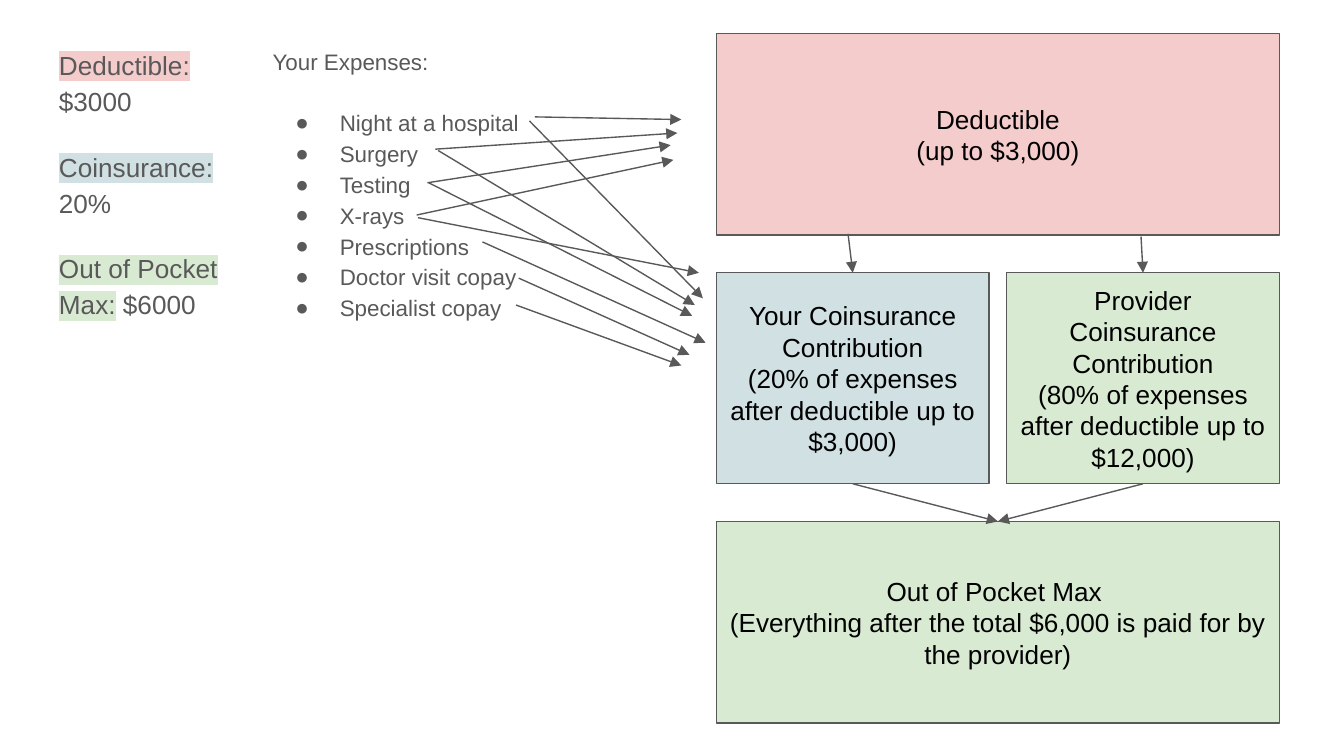
from typing import NamedTuple, Optional

from lxml import etree
from pptx import Presentation
from pptx.dml.color import RGBColor
from pptx.enum import shapes, text
from pptx.oxml.ns import qn
from pptx.util import Inches, Pt

GREY, BLACK = "595959", "000000"
PINK, BLUE, GREEN = "F4CCCC", "D0E0E3", "D9EAD3"


class Box(NamedTuple):
    left: float
    top: float
    width: float
    height: float
    fill: str
    title: str
    detail: str


class Term(NamedTuple):
    label: str
    value: str
    tint: str


class Arrow(NamedTuple):
    start: tuple[float, float]
    end: tuple[float, float]


LEFT, WIDE, HALF = 5.33, 4.19, 2.03
RIGHT = LEFT + WIDE - HALF

BOXES = [
    Box(LEFT, 0.25, WIDE, 1.5, PINK, "Deductible", "(up to $3,000)"),
    Box(LEFT, 2.03, HALF, 1.57, BLUE, "Your Coinsurance Contribution",
        "(20% of expenses after deductible up to $3,000)"),
    Box(RIGHT, 2.03, HALF, 1.57, GREEN, "Provider Coinsurance Contribution",
        "(80% of expenses after deductible up to $12,000)"),
    Box(LEFT, 3.88, WIDE, 1.5, GREEN, "Out of Pocket Max ",
        "(Everything after the total $6,000 is paid for by the provider)"),
]

TERMS = [
    Term("Deductible: ", "$3000", PINK),
    Term("Coinsurance:", " 20%", BLUE),
    Term("Out of Pocket Max:", " $6000", GREEN),
]

COSTS = ["Night at a hospital", "Surgery", "Testing", "X-rays",
         "Prescriptions", "Doctor visit copay", "Specialist copay"]

ARROWS = [
    Arrow((3.98, 0.87), (5.07, 0.89)),
    Arrow((3.94, 0.9), (5.23, 2.22)),
    Arrow((3.24, 1.11), (5.04, 0.99)),
    Arrow((3.26, 1.12), (5.17, 2.27)),
    Arrow((3.18, 1.36), (4.99, 1.08)),
    Arrow((3.19, 1.36), (5.15, 2.35)),
    Arrow((3.1, 1.6), (5.01, 1.19)),
    Arrow((3.11, 1.62), (5.2, 2.03)),
    Arrow((3.59, 1.8), (5.25, 2.55)),
    Arrow((3.86, 2.07), (5.13, 2.64)),
    Arrow((3.84, 2.27), (5.07, 2.72)),
]


def color(code: str) -> RGBColor:
    return RGBColor.from_string(code)


def style(run, size: float, code: str) -> None:
    run.font.size = Pt(size)
    run.font.name = "Arial"
    run.font.color.rgb = color(code)


def mark(run, code: str) -> None:
    """Highlight a run; the schema wants this right after its fill."""
    tint = etree.Element(qn("a:highlight"))
    etree.SubElement(tint, qn("a:srgbClr"), val=code)
    run.font._element.find(qn("a:solidFill")).addnext(tint)


def bullet(para) -> None:
    props = para._p.get_or_add_pPr()
    props.set("marL", str(Inches(0.5)))
    props.set("indent", str(Inches(-0.33)))
    tone = etree.SubElement(props, qn("a:buClr"))
    etree.SubElement(tone, qn("a:srgbClr"), val=GREY)
    etree.SubElement(props, qn("a:buFont"), typeface="Arial")
    etree.SubElement(props, qn("a:buChar"), char="●")


def pad(frame) -> None:
    frame.word_wrap = True
    frame.margin_left = frame.margin_right = Inches(0.1)
    frame.margin_top = frame.margin_bottom = Inches(0.1)


def add_text(slide, left: float, top: float, width: float, height: float):
    frame = slide.shapes.add_textbox(
        Inches(left), Inches(top), Inches(width), Inches(height)).text_frame
    pad(frame)
    return frame


def add_costs(slide) -> None:
    frame = add_text(slide, 1.93, 0.23, 2.09, 5.15)
    frame.text = "\n".join(["Your Expenses:", *COSTS])
    for i, para in enumerate(frame.paragraphs):
        para.line_spacing = 1.15
        style(para.runs[0], 12, GREY)
        if i == 1:
            para.space_before = Pt(16)
        if i:
            bullet(para)


def add_terms(slide) -> None:
    frame = add_text(slide, 0.34, 0.23, 1.5, 2.41)
    for i, term in enumerate(TERMS):
        para = frame.add_paragraph() if i else frame.paragraphs[0]
        para.line_spacing = 1.15
        if i:
            para.space_before = Pt(16)
        for part in (term.label, term.value):
            run = para.add_run()
            run.text = part
            style(run, 14, GREY)
        mark(para.runs[0], term.tint)
    frame.paragraphs[-1].space_after = Pt(16)


def add_box(slide, box: Box):
    shape = slide.shapes.add_shape(
        shapes.MSO_SHAPE.RECTANGLE, Inches(box.left), Inches(box.top),
        Inches(box.width), Inches(box.height))
    shape.shadow.inherit = False
    shape.fill.solid()
    shape.fill.fore_color.rgb = color(box.fill)
    shape.line.color.rgb = color(GREY)
    shape.line.width = Pt(0.75)
    frame = shape.text_frame
    pad(frame)
    frame.vertical_anchor = text.MSO_ANCHOR.MIDDLE
    frame.text = f"{box.title}\n{box.detail}"
    for para in frame.paragraphs:
        para.alignment = text.PP_ALIGN.CENTER
        style(para.runs[0], 14, BLACK)
    return shape


def add_arrow(slide, arrow: Arrow, source: Optional[object] = None,
              target: Optional[object] = None) -> None:
    """Draw an arrow, joined to a source's bottom and a target's top if given."""
    line = slide.shapes.add_connector(
        shapes.MSO_CONNECTOR.STRAIGHT,
        *map(Inches, arrow.start), *map(Inches, arrow.end))
    line.line.color.rgb = color(GREY)
    line.line.width = Pt(0.75)
    etree.SubElement(line.line._get_or_add_ln(), qn("a:tailEnd"),
                     type="triangle")
    etree.SubElement(line._element.spPr, qn("a:effectLst"))
    if source is not None:
        line.begin_connect(source, 2)
    if target is not None:
        line.end_connect(target, 0)


def main() -> None:
    deck = Presentation()
    deck.slide_width = Inches(10)
    deck.slide_height = Inches(10 * 9 / 16)
    slide = deck.slides.add_slide(deck.slide_layouts[6])
    add_costs(slide)
    add_terms(slide)
    _, yours, theirs, cap = [add_box(slide, box) for box in BOXES]
    add_arrow(slide, Arrow((6.31, 1.74), (6.35, 2.03)), target=yours)
    add_arrow(slide, Arrow((8.49, 1.76), (8.5, 2.03)), target=theirs)
    for share, x in ((yours, 6.35), (theirs, 8.5)):
        add_arrow(slide, Arrow((x, 3.6), (7.43, 3.88)), share, cap)
    for arrow in ARROWS:
        add_arrow(slide, arrow)
    deck.save("out.pptx")


if __name__ == "__main__":
    main()
